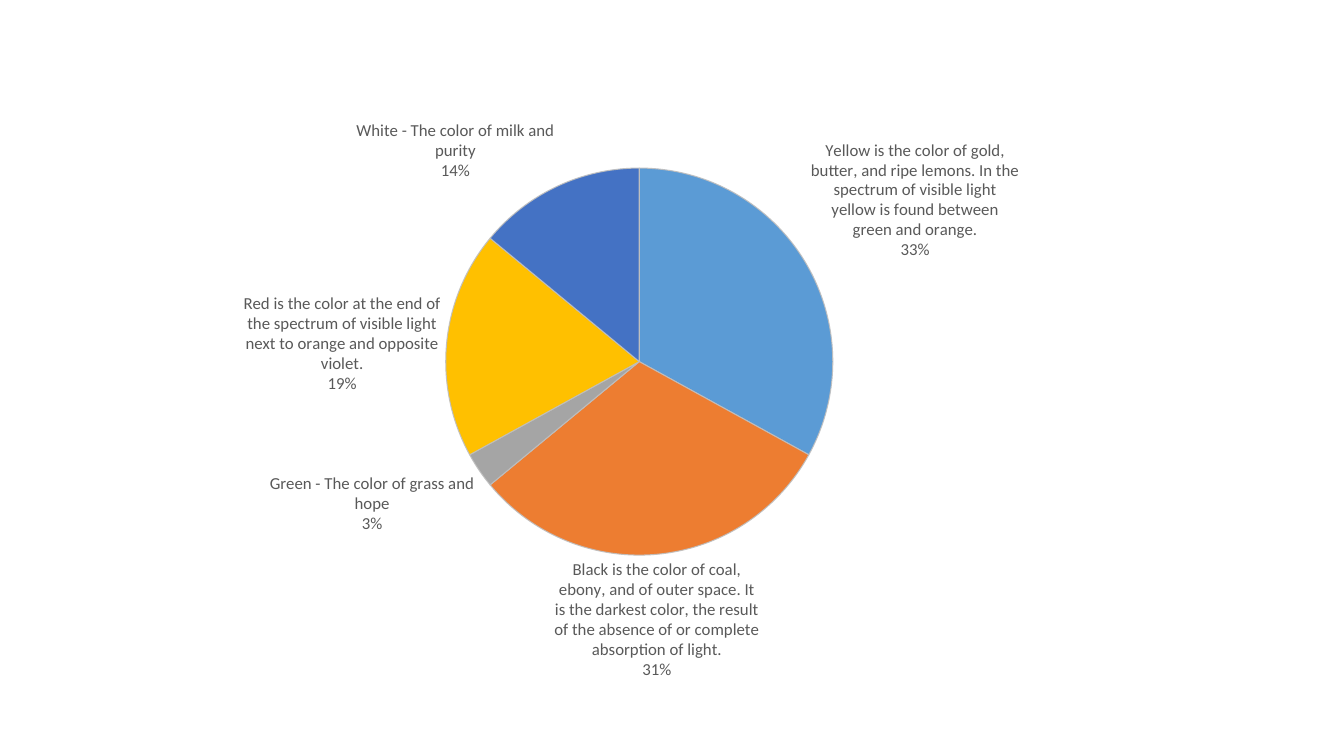
from dataclasses import dataclass

from lxml import etree
from pptx import Presentation
from pptx.chart.data import CategoryChartData
from pptx.dml.color import RGBColor
from pptx.enum.chart import XL_CHART_TYPE, XL_LABEL_POSITION
from pptx.oxml.ns import qn
from pptx.util import Emu, Pt

PIE = XL_CHART_TYPE.PIE
BEST_FIT = XL_LABEL_POSITION.BEST_FIT

# Content: label, share, slice colour name
SLICES = [
    ("Yellow is the color of gold, butter, and ripe lemons. In the spectrum of "
     "visible light yellow is found between green and orange.", 33, "blue"),
    ("Black is the color of coal, ebony, and of outer space. It is the darkest "
     "color, the result of the absence of or complete absorption of light.", 31, "orange"),
    ("Green - The color of grass and hope", 3, "gray"),
    ("Red is the color at the end of the spectrum of visible light next to "
     "orange and opposite violet.", 19, "gold"),
    ("White - The color of milk and purity", 14, "navy"),
]

# Lengths in px
PX = 9072  # EMU per px
SLIDE = (1344, 756)
CHART = (98, 7, 1047, 729)  # left, top, width, height
CIRCLE = (446, 168, 387, 387)
LABEL_SHIFTS = {1: (-104, 0), 3: (0, 51)}  # centre these labels on their slices


@dataclass(frozen=True)
class Theme:
    blue: str = "5B9BD5"
    orange: str = "ED7D31"
    gray: str = "A5A5A5"
    gold: str = "FFC000"
    navy: str = "4472C4"
    outline: str = "BFBFBF"
    outline_alpha: int = 93
    outline_width: float = 0.75
    text: str = "595959"
    font: str = "Calibri"
    chart_size: int = 10
    label_size: int = 12


THEME = Theme()


def color(name):
    return RGBColor.from_string(getattr(THEME, name))


def add_pie(page):
    data = CategoryChartData()
    data.categories = [label for label, _, _ in SLICES]
    data.add_series("Series 1", [share for _, share, _ in SLICES])
    box = [Emu(length * PX) for length in CHART]
    chart = page.shapes.add_chart(PIE, *box, data).chart
    chart.has_legend = False
    chart.has_title = False
    chart.font.name = THEME.font
    chart.font.size = Pt(THEME.chart_size)
    chart.plots[0].vary_by_categories = True
    return chart


def make_layout(settings):
    layout = etree.Element(qn("c:layout"))
    manual = etree.SubElement(layout, qn("c:manualLayout"))
    for tag, value in settings.items():
        etree.SubElement(manual, qn(f"c:{tag}")).set("val", value)
    return layout


def place_circle(chart):
    left, top, width, height = CHART
    x, y, w, h = CIRCLE
    fractions = {"x": (x - left) / width, "y": (y - top) / height,
                 "w": w / width, "h": h / height}
    settings = {"layoutTarget": "inner", "xMode": "edge", "yMode": "edge"}
    settings.update({key: f"{value:.3f}" for key, value in fractions.items()})
    area = chart.plots[0]._element.getparent()
    for old in area.findall(qn("c:layout")):
        area.remove(old)
    area.insert(0, make_layout(settings))


def style_slices(series):
    for index, (_, _, name) in enumerate(SLICES):
        look = series.points[index].format
        look.fill.solid()
        look.fill.fore_color.rgb = color(name)
        look.line.width = Pt(THEME.outline_width)
        look.line.color.rgb = color("outline")
    # Slightly transparent outlines
    for line in series._element.iter(qn("a:ln")):
        for tint in line.iter(qn("a:srgbClr")):
            alpha = etree.SubElement(tint, qn("a:alpha"))
            alpha.set("val", str(THEME.outline_alpha * 1000))


def style_label(label, element):
    label.position = BEST_FIT
    label.font.name = THEME.font
    label.font.size = Pt(THEME.label_size)
    label.font.color.rgb = color("text")
    shown = {"showVal": "0", "showCatName": "1", "showPercent": "1"}
    for tag, value in shown.items():
        element.find(qn(f"c:{tag}")).set("val", value)
    # Percentage goes on its own line
    separator = etree.Element(qn("c:separator"))
    separator.text = "\n"
    element.find(qn("c:showBubbleSize")).addnext(separator)


def style_labels(series):
    labels = series.data_labels
    labels.number_format = "0%"
    labels.number_format_is_linked = False
    style_label(labels, labels._element)
    leaders = labels._element.find(qn("c:showLeaderLines"))
    if leaders is not None:
        leaders.set("val", "0")
    # Labels moved from their automatic place
    for index, (across, down) in LABEL_SHIFTS.items():
        label = series.points[index].data_label
        label.position = BEST_FIT
        marker = next(mark for mark in labels._element.iter(qn("c:idx"))
                      if mark.get("val") == str(index))
        style_label(label, marker.getparent())
        marker.addnext(make_layout({"x": f"{across / CHART[2]:.3f}",
                                    "y": f"{down / CHART[3]:.3f}"}))


def main():
    deck = Presentation()
    deck.slide_width, deck.slide_height = [Emu(side * PX) for side in SLIDE]
    page = deck.slides.add_slide(deck.slide_layouts[6])
    chart = add_pie(page)
    place_circle(chart)
    series = chart.plots[0].series[0]
    style_slices(series)
    style_labels(series)
    deck.save("out.pptx")


if __name__ == "__main__":
    main()
